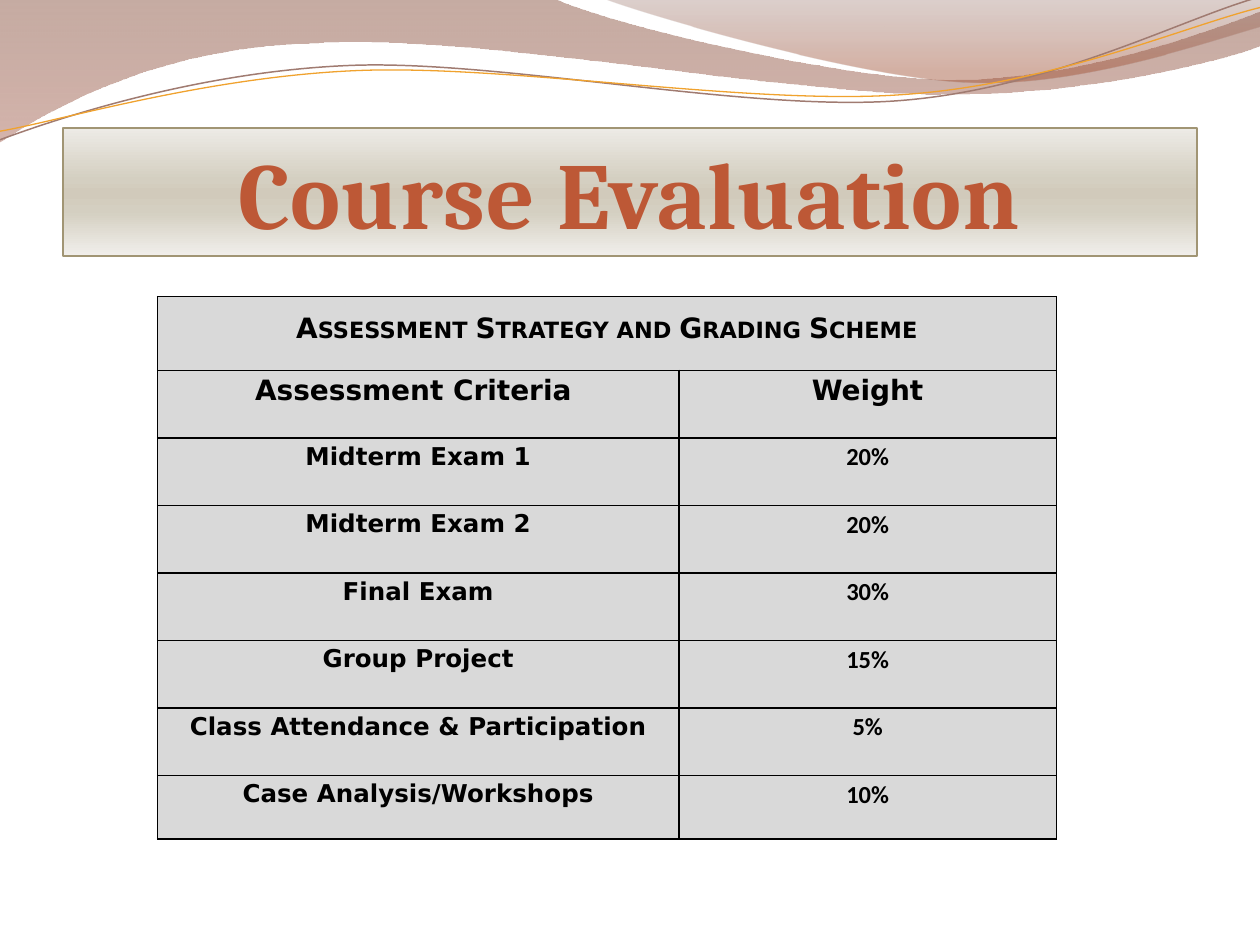
"""Build the course evaluation slide with its waves, title banner and grading table."""
from dataclasses import dataclass
from typing import Any, Optional

from lxml import etree
from pptx import Presentation
from pptx import util as u
from pptx.dml.color import RGBColor
from pptx.enum import text
from pptx.oxml.ns import qn

Pt = u.Pt
BLACK = RGBColor(0x00, 0x00, 0x00)
GREY = RGBColor(0xD9, 0xD9, 0xD9)
RUST = RGBColor(0xBD, 0x58, 0x36)
KHAKI = RGBColor(0xA1, 0x95, 0x74)
MAUVE = RGBColor(0xA0, 0x7B, 0x71)
AMBER = RGBColor(0xF0, 0xA2, 0x2E)
BROWN = RGBColor(0x81, 0x47, 0x33)
ROSE = RGBColor(0xB1, 0x76, 0x67)
UMBER = RGBColor(0x8C, 0x63, 0x59)
SIENNA = RGBColor(0xA1, 0x51, 0x35)
PEARL = RGBColor(0xED, 0xEB, 0xE6)
STONE = RGBColor(0xD4, 0xCF, 0xC1)
SAND = RGBColor(0xD1, 0xCA, 0xBB)
IVORY = RGBColor(0xF1, 0xEF, 0xEB)

Point = tuple[float, float]


@dataclass(frozen=True)
class Stop:
    position: int
    color: RGBColor
    opacity: int = 100


@dataclass(frozen=True)
class Wave:
    start: Point
    segments: tuple[tuple[Point, ...], ...]
    stops: tuple[Stop, ...] = ()
    line: Optional[RGBColor] = None
    width: float = 0
    rotation: float = 0


@dataclass(frozen=True)
class Style:
    font: str
    size: float
    spacing: float = 1.15
    after: float = 0
    small_caps: bool = False


WAVES = (
    Wave((0, 0), (
        ((316.8, -0.7),),
        ((342.7, 12.2), (478.1, 45.4), (545.8, 45.4)),
        ((614.2, 45.4), (689.8, 18.7), (720, 6.5)),
        ((720.7, 25.9),),
        ((707.8, 31.7), (626.4, 54.7), (537.1, 54)),
        ((447.8, 54), (275, 20.2), (185, 24.5)),
        ((92.9, 25.9), (33.1, 59.8), (-0.7, 81.4)),
        ((0, 0),),
    ), (Stop(0, BROWN, 45), Stop(100, ROSE, 55))),
    Wave((344.9, -0.7), (
        ((366.5, 7.9), (491, 44.6), (553.7, 46.8)),
        ((616.3, 49.7), (691.9, 23), (720, 15.1)),
        ((720, 0),),
        ((344.9, -0.7),),
    ), (Stop(0, UMBER, 30), Stop(80, SIENNA, 45))),
    Wave((-1.4, 62.9), (
        ((33.8, 51.7), (114.1, 29.4), (199.8, 29.9)),
        ((284.9, 30.3), (425.8, 67.3), (512.4, 64.8)),
        ((599, 62.4), (676.4, 25.7), (720.2, 15.6)),
    ), line=MAUVE, width=0.85, rotation=357.3),
    Wave((-1.1, 58), (
        ((32.9, 53.8), (118.3, 32.5), (204.1, 33)),
        ((290.6, 33.4), (428.9, 63.8), (515.5, 61.4)),
        ((601.3, 59.6), (678.4, 29.8), (721.4, 21.3)),
    ), line=AMBER, width=0.75, rotation=357.3),
)
BANNER = (Stop(0, PEARL), Stop(40, STONE), Stop(50, SAND), Stop(65, STONE), Stop(100, IVORY))

HEADING = Style("DejaVu Sans", 16, spacing=1.5, small_caps=True)
COLUMN = Style("DejaVu Sans", 16)
LABEL = Style("DejaVu Sans", 14, after=10)
VALUE = Style("Calibri", 14, after=10)

GRADES = (
    ("Midterm Exam 1", "20%"),
    ("Midterm Exam 2", "20%"),
    ("Final Exam", "30%"),
    ("Group Project", "15%"),
    ("Class Attendance & Participation", "5%"),
    ("Case Analysis/Workshops", "10%"),
)


def apply(target: Any, values: dict[str, Any]) -> None:
    for name, value in values.items():
        setattr(target, name, value)


def fill_gradient(shape: Any, stops: tuple[Stop, ...]) -> None:
    shape.fill.gradient()
    shape.fill.gradient_angle = 270
    stop_list = shape.element.spPr.find(".//" + qn("a:gsLst"))
    stop_list.clear()
    for stop in stops:
        node = etree.SubElement(stop_list, qn("a:gs"), pos=str(stop.position * 1000))
        color = etree.SubElement(node, qn("a:srgbClr"), val=str(stop.color))
        if stop.opacity < 100:
            etree.SubElement(color, qn("a:alpha"), val=str(stop.opacity * 1000))


def bend_segments(shape: Any, wave: Wave) -> None:
    edges = iter(shape.element.spPr.findall(".//" + qn("a:lnTo")))
    for segment in wave.segments:
        first, *others = [next(edges) for _ in segment]
        if others:
            first.tag = qn("a:cubicBezTo")
            for edge in others:
                first.append(edge[0])
                edge.getparent().remove(edge)


def draw_wave(page: Any, wave: Wave) -> None:
    points = [wave.start, *(point for segment in wave.segments for point in segment)]
    places = [(Pt(x), Pt(y)) for x, y in points]
    builder = page.shapes.build_freeform(*places[0], scale=1.0)
    builder.add_line_segments(places[1:], close=bool(wave.stops))
    shape = builder.convert_to_shape()
    bend_segments(shape, wave)
    shape.shadow.inherit = False
    shape.rotation = wave.rotation
    if wave.stops:
        fill_gradient(shape, wave.stops)
        shape.line.fill.background()
    else:
        shape.fill.background()
        shape.line.color.rgb = wave.line
        shape.line.width = Pt(wave.width)


def draw_title(page: Any, wording: str) -> None:
    box = page.shapes.title
    apply(box, {"left": Pt(36), "top": Pt(73.2), "width": Pt(648), "height": Pt(73.2)})
    fill_gradient(box, BANNER)
    box.line.color.rgb = KHAKI
    box.line.width = Pt(0.94)
    apply(box.text_frame, {"auto_size": text.MSO_AUTO_SIZE.NONE, "word_wrap": True,
                           "vertical_anchor": text.MSO_ANCHOR.MIDDLE})
    para = box.text_frame.paragraphs[0]
    para.alignment = text.PP_ALIGN.CENTER
    span = para.add_run()
    span.text = wording
    apply(span.font, {"name": "Cambria", "size": Pt(54), "bold": True})
    span.font.color.rgb = RUST
    span.font._element.set("spc", "50")


def draw_borders(cell: Any) -> None:
    properties = cell._tc.get_or_add_tcPr()
    for index, side in enumerate(("lnL", "lnR", "lnT", "lnB")):
        border = etree.Element(qn("a:" + side), w=str(Pt(1)))
        solid = etree.SubElement(border, qn("a:solidFill"))
        etree.SubElement(solid, qn("a:srgbClr"), val=str(BLACK))
        properties.insert(index, border)


def write_cell(cell: Any, wording: str, style: Style) -> None:
    para = cell.text_frame.paragraphs[0]
    apply(para, {"alignment": text.PP_ALIGN.CENTER, "line_spacing": style.spacing,
                 "space_after": Pt(style.after)})
    span = para.add_run()
    span.text = wording
    apply(span.font, {"name": style.font, "size": Pt(style.size), "bold": True})
    span.font.color.rgb = BLACK
    if style.small_caps:
        span.font._element.set("cap", "small")


def draw_table(page: Any) -> None:
    widths = (298, 215.7)
    heights = [42.1] + [38.6] * len(GRADES) + [36.5]
    frame = page.shapes.add_table(len(heights), len(widths), Pt(90), Pt(169.5),
                                  Pt(sum(widths)), Pt(sum(heights)))
    table = frame.table
    apply(table, {"first_row": False, "horz_banding": False})
    for column, width in zip(table.columns, widths):
        column.width = Pt(width)
    for row, height in zip(table.rows, heights):
        row.height = Pt(height)
    for cell in table.iter_cells():
        apply(cell, {"margin_left": Pt(5.4), "margin_right": Pt(5.4),
                     "margin_top": 0, "margin_bottom": 0})
        cell.fill.solid()
        cell.fill.fore_color.rgb = GREY
        draw_borders(cell)
    table.cell(0, 0).merge(table.cell(0, 1))
    write_cell(table.cell(0, 0), "Assessment Strategy and Grading Scheme", HEADING)
    for index, wordings in enumerate((("Assessment Criteria ", "Weight"), *GRADES), start=1):
        styles = (COLUMN, COLUMN) if index == 1 else (LABEL, VALUE)
        for column, (wording, style) in enumerate(zip(wordings, styles)):
            write_cell(table.cell(index, column), wording, style)


def main() -> None:
    deck = Presentation()
    apply(deck, {"slide_width": Pt(720), "slide_height": Pt(540)})
    page = deck.slides.add_slide(deck.slide_layouts[5])
    for wave in WAVES:
        draw_wave(page, wave)
    draw_title(page, "Course Evaluation")
    draw_table(page)
    deck.save("out.pptx")


if __name__ == "__main__":
    main()
